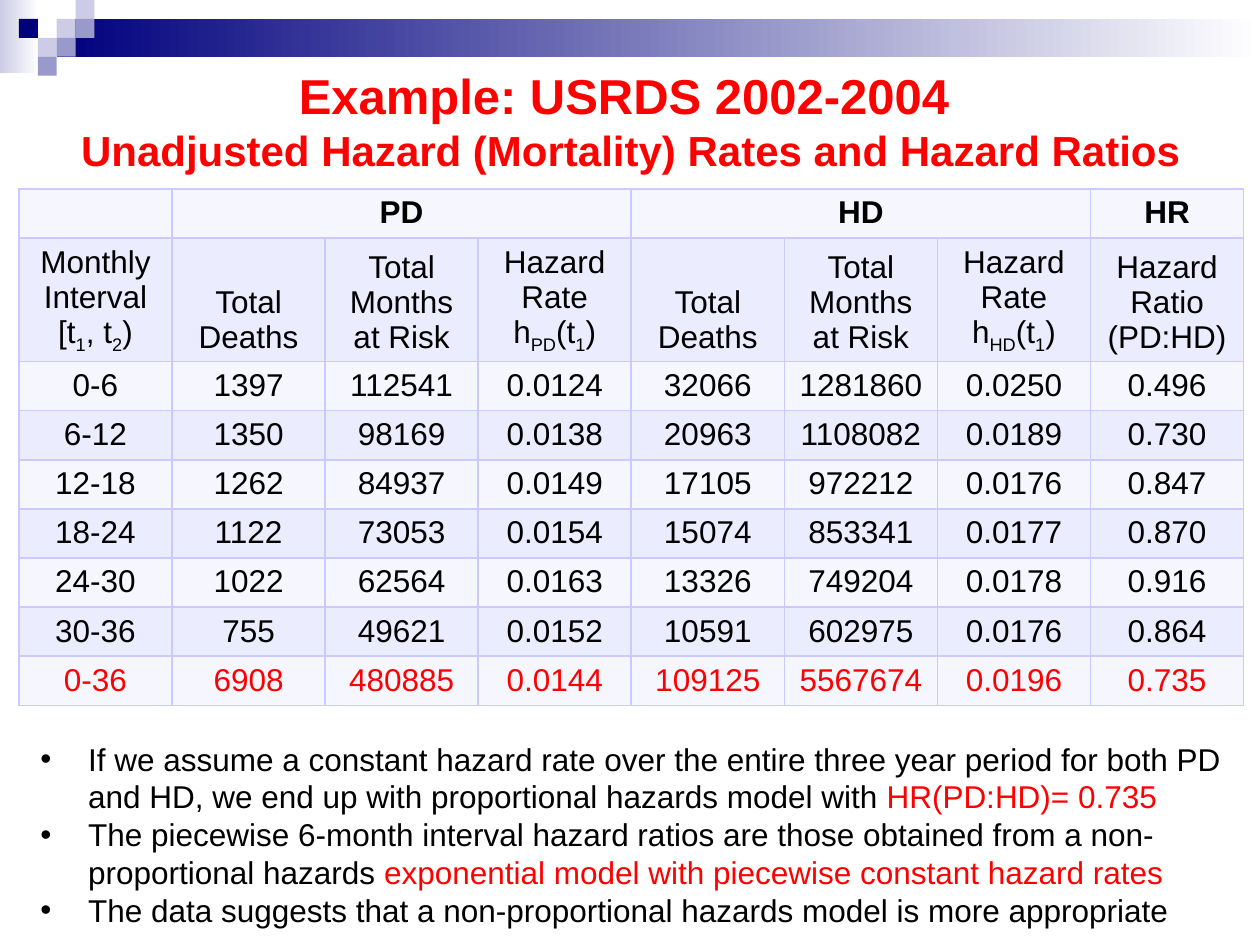
"""Build the hazard rate slide with its table and notes."""
from dataclasses import dataclass
from typing import NamedTuple

from lxml.etree import SubElement
from pptx import Presentation
from pptx.dml.color import RGBColor
from pptx.enum.shapes import MSO_SHAPE
from pptx.enum.text import MSO_ANCHOR, MSO_AUTO_SIZE, PP_ALIGN
from pptx.oxml.ns import qn
from pptx.util import Inches, Pt


@dataclass(frozen=True)
class Theme:
    font: str = "Arial"
    ink: str = "000000"
    red: str = "FF0000"
    white: str = "FFFFFF"
    navy: str = "00007D"
    pale: str = "CCCCE6"
    mid: str = "9999CC"
    edge: str = "CACAFF"
    bands: tuple[str, str] = ("F6F6FF", "ECECFF")
    head: int = 28
    subhead: int = 24
    text: int = 18


class Box(NamedTuple):
    """Hold a place as percent shares of the slide."""
    x: float
    y: float
    w: float
    h: float


class Bar(NamedTuple):
    box: Box
    hue: str


class Tile(NamedTuple):
    col: int
    row: int
    hue: str


THEME = Theme()
WIDE, HIGH = Inches(10), Inches(7.5)
STEP_X, STEP_Y = 1.5, 2
HEAD_BOX = Box(0.7, 6.93, 98.7, 11.6)
GRID_BOX = Box(1.5, 20, 97.2, 54.4)
NOTE_BOX = Box(2.2, 77.6, 97.2, 25.6)
ROW, TALL_ROW = 5.2, 12.8
HANG = Inches(0.38)

BARS = [Bar(Box(0, 0, 3.1, 7.73), THEME.pale), Bar(Box(4.5, 2, 95.5, 4), THEME.navy)]
TILES = [
    Tile(3, 1, THEME.pale), Tile(4, 0, THEME.pale), Tile(4, 1, THEME.mid),
    Tile(2, 2, THEME.pale), Tile(1, 1, THEME.navy), Tile(3, 2, THEME.mid),
    Tile(2, 3, THEME.mid),
]
DEATHS, MONTHS = "Total\nDeaths", "Total Months at Risk"
ROWS = [
    ["", "PD", "", "", "HD", "", "", "HR"],
    ["Monthly\nInterval\n[t|1|, t|2|)", DEATHS, MONTHS, "Hazard Rate\nh|PD|(t|1|)",
     DEATHS, MONTHS, "Hazard Rate\nh|HD|(t|1|)", "Hazard\nRatio\n(PD:HD)"],
    ["0-6", "1397", "112541", "0.0124", "32066", "1281860", "0.0250", "0.496"],
    ["6-12", "1350", "98169", "0.0138", "20963", "1108082", "0.0189", "0.730"],
    ["12-18", "1262", "84937", "0.0149", "17105", "972212", "0.0176", "0.847"],
    ["18-24", "1122", "73053", "0.0154", "15074", "853341", "0.0177", "0.870"],
    ["24-30", "1022", "62564", "0.0163", "13326", "749204", "0.0178", "0.916"],
    ["30-36", "755", "49621", "0.0152", "10591", "602975", "0.0176", "0.864"],
    ["0-36", "6908", "480885", "0.0144", "109125", "5567674", "0.0196", "0.735"],
]
NOTES = [
    "If we assume a constant hazard rate over the entire three year period for both PD "
    "and HD, we end up with proportional hazards model with |HR(PD:HD)= 0.735",
    "The piecewise 6-month interval hazard ratios are those obtained from a "
    "non-proportional hazards |exponential model with piecewise constant hazard rates",
    "The data suggests that a non-proportional hazards model is more appropriate",
]


def place(box: Box) -> tuple[int, int, int, int]:
    return tuple(int(share * size / 100) for share, size in zip(box, (WIDE, HIGH) * 2))


def move(shape, box: Box) -> None:
    shape.left, shape.top, shape.width, shape.height = place(box)


def style(font, size: int, hue: str, bold: bool = False) -> None:
    font.name, font.size, font.bold = THEME.font, Pt(size), bold
    font.color.rgb = RGBColor.from_string(hue)


def add_block(slide, box: Box):
    block = slide.shapes.add_shape(MSO_SHAPE.RECTANGLE, *place(box))
    block.shadow.inherit = False
    block.line.fill.background()
    return block


def add_bar(slide, bar: Bar) -> None:
    fill = add_block(slide, bar.box).fill
    fill.gradient()
    fill.gradient_angle = 0
    for stop, hue in zip(fill.gradient_stops, (bar.hue, THEME.white)):
        stop.color.rgb = RGBColor.from_string(hue)


def add_tile(slide, tile: Tile) -> None:
    box = Box(tile.col * STEP_X, tile.row * STEP_Y, STEP_X, STEP_Y)
    fill = add_block(slide, box).fill
    fill.solid()
    fill.fore_color.rgb = RGBColor.from_string(tile.hue)


def fill_title(title) -> None:
    move(title, HEAD_BOX)
    frame = title.text_frame
    frame.auto_size, frame.vertical_anchor = MSO_AUTO_SIZE.NONE, MSO_ANCHOR.MIDDLE
    para = frame.paragraphs[0]
    para.alignment = PP_ALIGN.CENTER
    style(para.font, THEME.head, THEME.red, True)
    para.add_run().text = "Example: USRDS 2002-2004 "
    para.add_line_break()
    sub = para.add_run()
    sub.text = "Unadjusted Hazard (Mortality) Rates and Hazard Ratios"
    sub.font.size = Pt(THEME.subhead)


def add_edges(cell) -> None:
    props = cell._tc.get_or_add_tcPr()
    for spot, side in enumerate(("lnL", "lnR", "lnT", "lnB")):
        line = props.makeelement(qn(f"a:{side}"), {"w": str(Pt(1))})
        fill = SubElement(line, qn("a:solidFill"))
        SubElement(fill, qn("a:srgbClr"), val=THEME.edge)
        props.insert(spot, line)


def fill_cell(cell, text: str, row: int) -> None:
    cell.fill.solid()
    cell.fill.fore_color.rgb = RGBColor.from_string(THEME.bands[row % 2])
    add_edges(cell)
    cell.vertical_anchor = MSO_ANCHOR.BOTTOM if row == 1 else MSO_ANCHOR.TOP
    frame = cell.text_frame
    hue = THEME.red if row == len(ROWS) - 1 else THEME.ink
    for spot, line in enumerate(text.split("\n")):
        para = frame.add_paragraph() if spot else frame.paragraphs[0]
        para.alignment = PP_ALIGN.CENTER
        style(para.font, THEME.text, hue, row == 0)
        for part, piece in enumerate(line.split("|")):
            run = para.add_run()
            run.text = piece
            if part % 2:
                run.font._element.set("baseline", "-25000")


def add_grid(slide) -> None:
    count = len(ROWS[0])
    table = slide.shapes.add_table(len(ROWS), count, *place(GRID_BOX)).table
    table.first_row = table.horz_banding = False
    for col in table.columns:
        col.width = int(WIDE * GRID_BOX.w / 100 / count)
    for row, texts in enumerate(ROWS):
        table.rows[row].height = int(HIGH * (TALL_ROW if row == 1 else ROW) / 100)
        for col, text in enumerate(texts):
            fill_cell(table.cell(row, col), text, row)
    for col in (1, 4):
        table.cell(0, col).merge(table.cell(0, col + 2))


def fill_notes(body) -> None:
    move(body, NOTE_BOX)
    frame = body.text_frame
    frame.auto_size, frame.vertical_anchor = MSO_AUTO_SIZE.NONE, MSO_ANCHOR.TOP
    for spot, note in enumerate(NOTES):
        para = frame.add_paragraph() if spot else frame.paragraphs[0]
        para.space_before = Pt(0)
        style(para.font, THEME.text, THEME.ink)
        props = para._p.get_or_add_pPr()
        props.set("marL", str(HANG))
        props.set("indent", str(-HANG))
        mark = props.makeelement(qn("a:buChar"), {"char": "•"})
        props.find(qn("a:defRPr")).addprevious(mark)
        for piece, hue in zip(note.split("|"), (THEME.ink, THEME.red)):
            run = para.add_run()
            run.text = piece
            run.font.color.rgb = RGBColor.from_string(hue)


def main() -> None:
    deck = Presentation()
    deck.slide_width, deck.slide_height = WIDE, HIGH
    slide = deck.slides.add_slide(deck.slide_layouts[1])
    title, body = slide.placeholders
    for bar in BARS:
        add_bar(slide, bar)
    for tile in TILES:
        add_tile(slide, tile)
    fill_title(title)
    slide.shapes._spTree.append(title.element)
    add_grid(slide)
    fill_notes(body)
    slide.shapes._spTree.append(body.element)
    deck.save("out.pptx")


if __name__ == "__main__":
    main()
